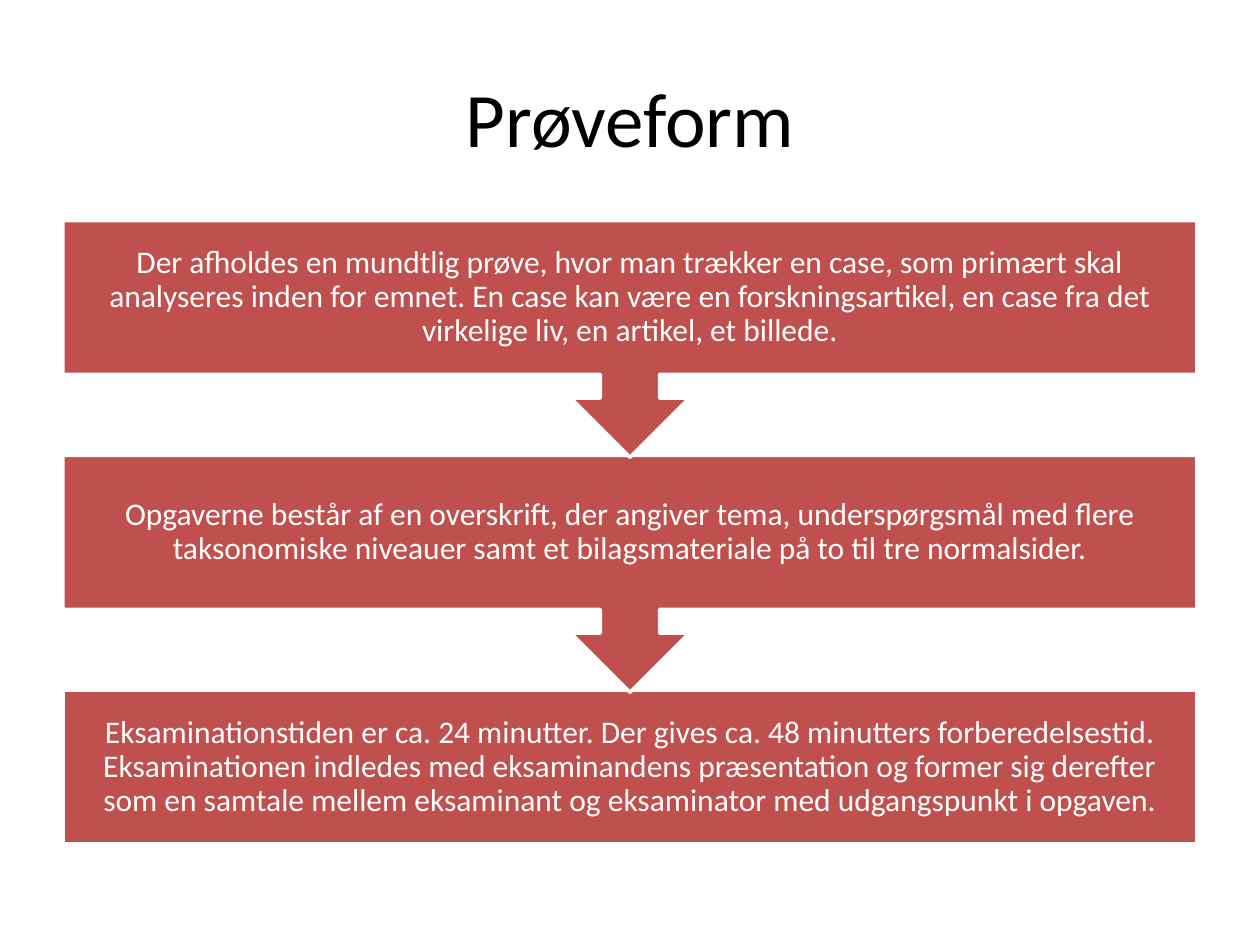
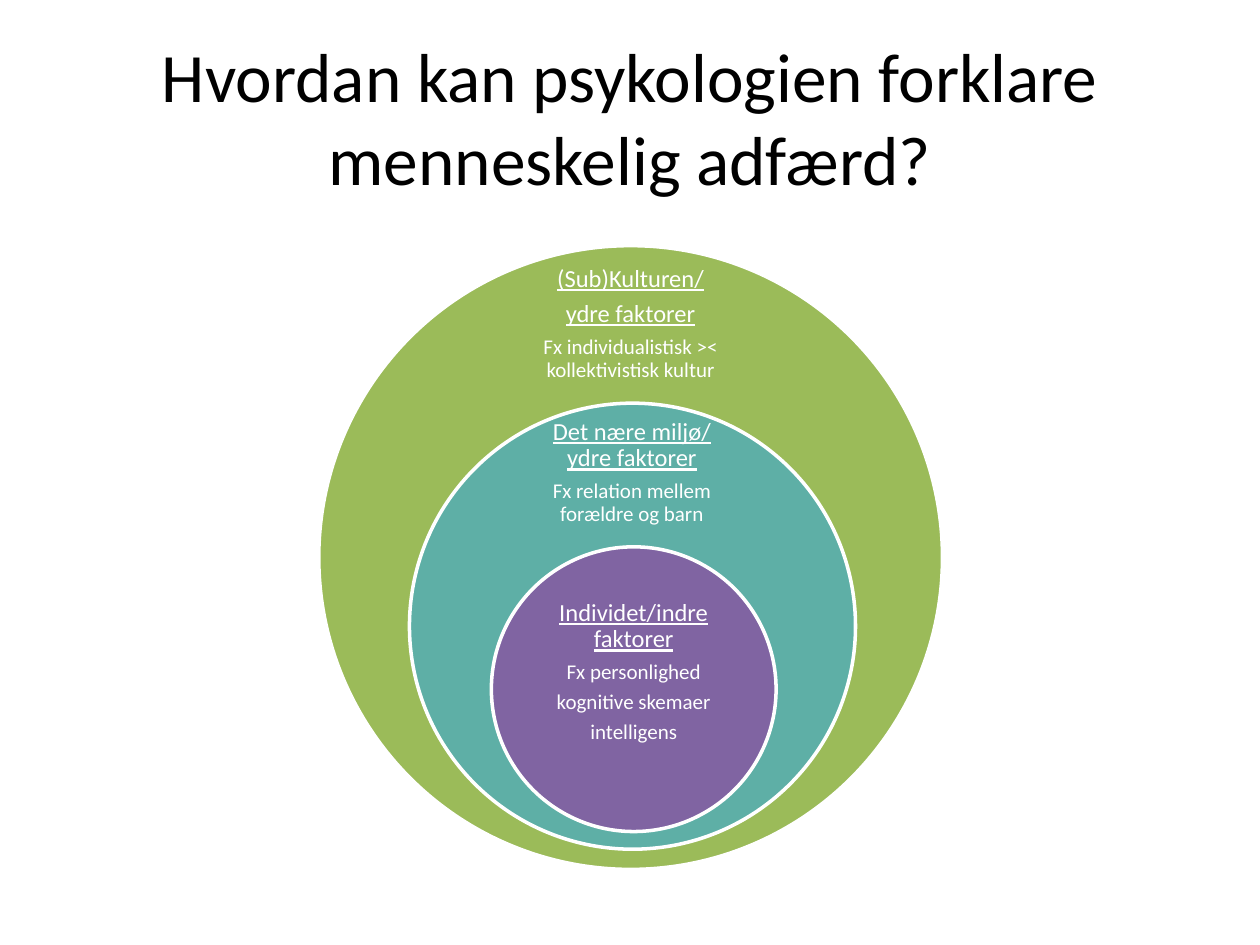
from pptx import Presentation
from pptx.dml.color import RGBColor
from pptx.enum.shapes import MSO_SHAPE
from pptx.enum.text import MSO_ANCHOR, PP_ALIGN
from pptx.util import Inches, Pt

RECTANGLE = MSO_SHAPE.RECTANGLE
CALLOUT = MSO_SHAPE.DOWN_ARROW_CALLOUT
ELLIPSE = MSO_SHAPE.OVAL
MIDDLE = MSO_ANCHOR.MIDDLE
CENTER = PP_ALIGN.CENTER

BLACK = RGBColor(0x00, 0x00, 0x00)
WHITE = RGBColor(0xFF, 0xFF, 0xFF)
RED = RGBColor(0xC0, 0x50, 0x4D)
GREEN = RGBColor(0x9B, 0xBB, 0x59)
TEAL = RGBColor(0x5E, 0xAF, 0xA6)
PURPLE = RGBColor(0x80, 0x64, 0xA2)

COLUMNS, ROWS = 20, 15
FONT = "Calibri"
HEADING_SIZE, DETAIL_SIZE, STEP_SIZE = 14, 12, 18
STEP_TOP, STEP_PITCH = 3.5, 3.73
BAND_HEIGHT, CALLOUT_HEIGHT = 2.44, 3.76

STEPS = [
    "Der afholdes en mundtlig prøve, hvor man trækker en case, som primært skal "
    "analyseres inden for emnet. En case kan være en forskningsartikel, en case fra det "
    "virkelige liv, en artikel, et billede.",
    "Opgaverne består af en overskrift, der angiver tema, underspørgsmål med flere "
    "taksonomiske niveauer samt et bilagsmateriale på to til tre normalsider.",
    "Eksaminationstiden er ca. 24 minutter. Der gives ca. 48 minutters forberedelsestid. "
    "Eksaminationen indledes med eksaminandens præsentation og former sig derefter "
    "som en samtale mellem eksaminant og eksaminator med udgangspunkt i opgaven.",
]

# Each layer: colour, circle (left, top, diameter), label area, headings, details
LAYERS = [
    (GREEN, (5.06, 3.9, 9.9), (8.28, 4.4, 3.46, 1.48),
     ["(Sub)Kulturen/", "ydre faktorer"],
     ["Fx individualistisk >< kollektivistisk kultur"]),
    (TEAL, (6.5, 6.4, 7.08), (8.38, 6.84, 3.3, 1.32),
     ["Det nære miljø/ ydre faktorer"],
     ["Fx relation mellem forældre og barn"]),
    (PURPLE, (7.8, 8.68, 4.52), (8.46, 9.54, 3.2, 2.26),
     ["Individet/indre faktorer"],
     ["Fx personlighed", "kognitive skemaer", "intelligens"]),
]


class Deck:
    """Hold the shared style and the current page, and draw on a 20 by 15 grid."""

    def __init__(self):
        self.file = Presentation()
        self.file.slide_width, self.file.slide_height = Inches(10), Inches(7.5)
        self.column = self.file.slide_width / COLUMNS
        self.row = self.file.slide_height / ROWS
        self.page = None

    def place(self, left, top, width, height):
        return (round(left * self.column), round(top * self.row),
                round(width * self.column), round(height * self.row))

    def add_page(self, title, size):
        self.page = self.file.slides.add_slide(self.file.slide_layouts[6])
        box = self.page.shapes.add_textbox(*self.place(1, 0.6, 18, 2.5))
        self.set_text(box, [(title, size, False)], BLACK)

    def set_text(self, box, lines, color, inset=None):
        frame = box.text_frame
        frame.word_wrap = True
        frame.vertical_anchor = MIDDLE
        frame.text = "\n".join(text for text, _, _ in lines)
        for para, (_, size, underline) in zip(frame.paragraphs, lines):
            para.alignment = CENTER
            if inset is not None:
                para.line_spacing = 0.9
                para.space_after = Pt(round(size * 0.35, 1))
            font = para.runs[0].font
            font.name, font.size, font.underline = FONT, Pt(size), underline
            font.color.rgb = color
        if inset is not None:
            frame.margin_left = frame.margin_right = Inches(inset)
            frame.margin_top = frame.margin_bottom = Inches(inset)

    def shape(self, kind, area, fill):
        shape = self.page.shapes.add_shape(kind, *self.place(*area))
        shape.shadow.inherit = False
        shape.fill.solid()
        shape.fill.fore_color.rgb = fill
        shape.line.color.rgb = WHITE
        shape.line.width = Pt(2)
        return shape

    def step(self, index, text, last):
        kind, height = (RECTANGLE, BAND_HEIGHT) if last else (CALLOUT, CALLOUT_HEIGHT)
        band = self.shape(kind, (1, STEP_TOP + index * STEP_PITCH, 18, height), RED)
        self.set_text(band, [(text, STEP_SIZE, False)], WHITE, 0.14)

    def layer(self, fill, circle, area, headings, details):
        left, top, diameter = circle
        self.shape(ELLIPSE, (left, top, diameter, diameter), fill)
        label = self.page.shapes.add_textbox(*self.place(*area))
        lines = [(text, HEADING_SIZE, True) for text in headings]
        lines += [(text, DETAIL_SIZE, False) for text in details]
        self.set_text(label, lines, WHITE, 0.11)


def main():
    deck = Deck()
    deck.add_page("Prøveform", 44)
    for index in reversed(range(len(STEPS))):
        deck.step(index, STEPS[index], index == len(STEPS) - 1)
    deck.add_page("Hvordan kan psykologien forklare menneskelig adfærd?", 39.6)
    for layer in LAYERS:
        deck.layer(*layer)
    deck.file.save("out.pptx")


if __name__ == "__main__":
    main()
